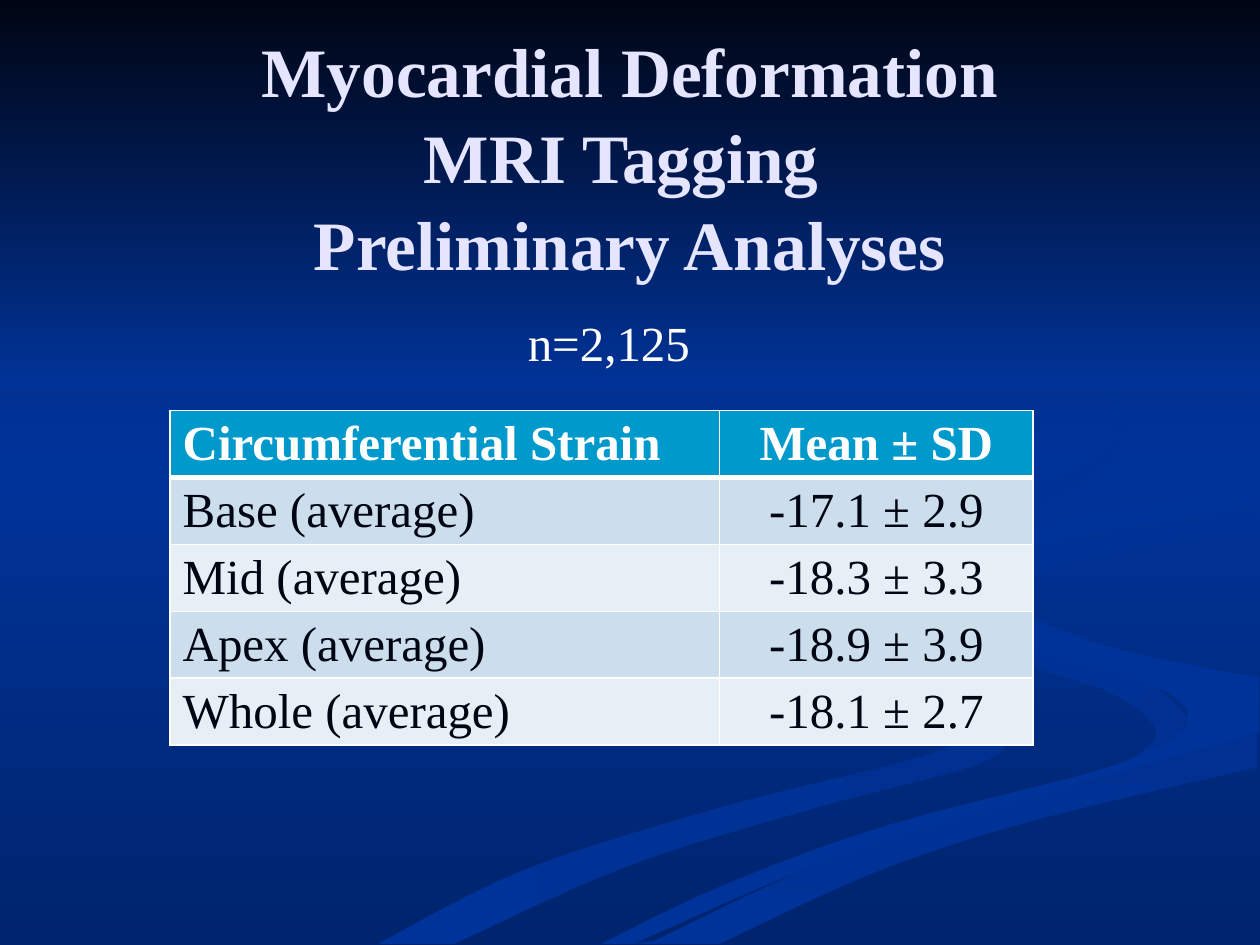
import copy

import pptx
import pptx.dml.color
import pptx.enum.shapes
import pptx.enum.text
import pptx.oxml
import pptx.oxml.ns
import pptx.util
from pptx.util import Inches

COLORS = {
    "navy": "00246D", "blue": "003399", "shade": "003091", "ink": "000514",
    "title": "E5E5FF", "white": "FFFFFF", "header": "0099CC",
    "band": "CCDEEC", "light": "E7EFF6",
}

# Ribbons: first colour, last colour, clockwise angle, curved edges in order
RIBBONS = [
    ("blue", "shade", 0, [
        [(7.8, 5.53), (6.6, 5.13), (5.75, 4.6)],
        [(5.72, 4.76), (7.62, 5.47), (7.86, 5.66), (7.39, 5.98),
         (5.79, 6.39), (4.17, 6.9), (3, 7.49)],
        [(3.61, 7.49), (4.99, 6.87), (6.51, 6.4), (7.8, 6.05), (8, 5.81)]]),
    ("blue", "shade", 45, [
        [(9.43, 5.7), (9.05, 5.4), (7.92, 5.09), (7.24, 4.64)],
        [(7.97, 5.24), (8.8, 5.49), (9.18, 5.81), (8.94, 6.05)],
        [(9.32, 5.89)]]),
    ("shade", "blue", 90, [
        [(5.03, 7.49)],
        [(5.71, 7.49), (6.95, 6.92), (8.21, 6.51), (9.98, 6.09)],
        [(9.98, 5.81), (8.31, 6.29), (6.62, 6.81), (5.19, 7.47)]]),
    ("blue", "blue", 0, [
        [(7.25, 4.64), (7.93, 5.09), (9.05, 5.4), (9.43, 5.7), (8.92, 6.05),
         (7.04, 6.55), (5.73, 7.03), (4.77, 7.49)],
        [(5.03, 7.49), (6.62, 6.81), (8.32, 6.29), (9.99, 5.81)],
        [(9.99, 5.38), (8.66, 5.09), (7.81, 4.63), (8.35, 4.3), (9.99, 4.02)],
        [(9.99, 3.87), (8.3, 4.15), (7.42, 4.39)]]),
    ("shade", "blue", 45, [
        [(7.81, 4.6), (8.26, 4.96)],
        [(8.05, 4.74), (8.43, 4.48), (9.98, 4.2)],
        [(9.98, 4.02), (8.35, 4.3)]]),
    ("shade", "blue", 45, [
        [(6.83, 4.3), (8.25, 4.02), (8.94, 3.44), (8.54, 2.83), (7.62, 2.33)],
        [(8.46, 2.79), (8.89, 3.35), (8.3, 3.82), (6.25, 4.26), (5.77, 4.62),
         (6.22, 5)],
        [(5.94, 4.65)]]),
]

STRAIN_ROWS = [
    ("Circumferential Strain", "Mean ± SD"),
    ("Base (average)", "-17.1 ± 2.9"),
    ("Mid (average)", "-18.3 ± 3.3"),
    ("Apex (average)", "-18.9 ± 3.9"),
    ("Whole (average)", "-18.1 ± 2.7"),
]


def rgb(name):
    return pptx.dml.color.RGBColor.from_string(COLORS[name])


def smooth(edge, steps=6):
    """Run a Catmull-Rom curve through the points of an edge."""
    padded = [edge[0], *edge, edge[-1]]
    curve = []
    for a, b, c, d in zip(padded, padded[1:], padded[2:], padded[3:]):
        for step in range(steps):
            t = step / steps
            curve.append(tuple(
                q + t * (r - p + t * (2 * p - 5 * q + 4 * r - s
                                      + t * (3 * (q - r) + s - p))) / 2
                for p, q, r, s in zip(a, b, c, d)))
    return curve + [edge[-1]]


class SlideBuilder:
    font = "Times New Roman"
    body_size = 28
    center = pptx.enum.text.PP_ALIGN.CENTER
    middle = pptx.enum.text.MSO_ANCHOR.MIDDLE

    def __init__(self, slide):
        self.slide = slide

    def style(self, paragraph, color, size=body_size, bold=False):
        for run in paragraph.runs:
            run.font.name = self.font
            run.font.size = pptx.util.Pt(size)
            run.font.bold = bold
            run.font.color.rgb = rgb(color)

    def gradient(self, fill, first, last, angle):
        fill.gradient()
        fill.gradient_angle = -angle % 360
        for stop, color, position in zip(fill.gradient_stops, (first, last), (0, 1)):
            stop.color.rgb = rgb(color)
            stop.position = position

    def background(self, edge, middle):
        fill = self.slide.background.fill
        self.gradient(fill, edge, edge, 90)
        stops = self.slide.element.find(".//" + pptx.oxml.ns.qn("a:gsLst"))
        stops.insert(1, copy.deepcopy(stops[0]))
        fill.gradient_stops[1].color.rgb = rgb(middle)
        fill.gradient_stops[1].position = 0.5

    def backdrop(self, shape, first, last, angle):
        shape.shadow.inherit = False
        shape.line.fill.background()
        self.gradient(shape.fill, first, last, angle)

    def ribbon(self, first, last, angle, edges):
        points = [(Inches(x), Inches(y)) for edge in edges for x, y in smooth(edge)]
        builder = self.slide.shapes.build_freeform(*points[0])
        builder.add_line_segments(points[1:], close=True)
        self.backdrop(builder.convert_to_shape(), first, last, angle)

    def sky(self, first, last, width, height):
        band = self.slide.shapes.add_shape(
            pptx.enum.shapes.MSO_SHAPE.RECTANGLE, 0, 0, Inches(width), Inches(height))
        self.backdrop(band, first, last, 90)

    def title(self, text, left, top, width, height):
        title = self.slide.shapes.title
        title.left, title.top = Inches(left), Inches(top)
        title.width, title.height = Inches(width), Inches(height)
        title.text_frame.text = text
        title.text_frame.vertical_anchor = self.middle
        heading = title.text_frame.paragraphs[0]
        heading.alignment = self.center
        heading.line_spacing = 1.04
        self.style(heading, "title", 39.6, True)
        # Bring the title in front of the ribbons
        title.element.getparent().append(title.element)

    def label(self, text, left, top, width, height):
        box = self.slide.shapes.add_textbox(
            Inches(left), Inches(top), Inches(width), Inches(height))
        box.text_frame.word_wrap = True
        box.text_frame.text = text
        self.style(box.text_frame.paragraphs[0], "white")

    def borders(self, cell, widths):
        properties = cell._tc.get_or_add_tcPr()
        for index, (side, width) in enumerate(widths.items()):
            properties.insert(index, pptx.oxml.parse_xml(
                f'<a:ln{side} {pptx.oxml.ns.nsdecls("a")} w="{pptx.util.Pt(width)}">'
                f'<a:solidFill><a:srgbClr val="{COLORS["white"]}"/></a:solidFill>'
                f'</a:ln{side}>'))

    def table(self, rows, left, top, column_widths, row_height):
        table = self.slide.shapes.add_table(
            len(rows), len(column_widths), Inches(left), Inches(top),
            Inches(sum(column_widths)), Inches(row_height * len(rows))).table
        for column, width in zip(table.columns, column_widths):
            column.width = Inches(width)
        for r, row in enumerate(rows):
            header = r == 0
            fill = "header" if header else ("light", "band")[r % 2]
            for c, text in enumerate(row):
                cell = table.cell(r, c)
                cell.text_frame.text = text
                cell.fill.solid()
                cell.fill.fore_color.rgb = rgb(fill)
                self.borders(cell, {"L": 1, "R": 1, "T": 3 if r == 1 else 1,
                                    "B": 3 if header else 1})
                paragraph = cell.text_frame.paragraphs[0]
                self.style(paragraph, "white" if header else "ink", bold=header)
                if c:
                    paragraph.alignment = self.center


def main():
    deck = pptx.Presentation()
    deck.slide_width, deck.slide_height = Inches(10), Inches(7.5)
    page = SlideBuilder(deck.slides.add_slide(deck.slide_layouts[5]))

    # Backdrop
    page.background("navy", "blue")
    for ribbon in RIBBONS:
        page.ribbon(*ribbon)
    page.sky("ink", "blue", 10, 3.08)

    # Content
    page.title("Myocardial Deformation\vMRI Tagging \vPreliminary Analyses",
               0.5, 0.17, 9, 2.11)
    page.table(STRAIN_ROWS, 1.35, 3.26, (4.36, 2.49), 0.53)
    page.label("n=2,125", 4.09, 2.43, 1.78, 0.57)
    deck.save("out.pptx")


if __name__ == "__main__":
    main()
